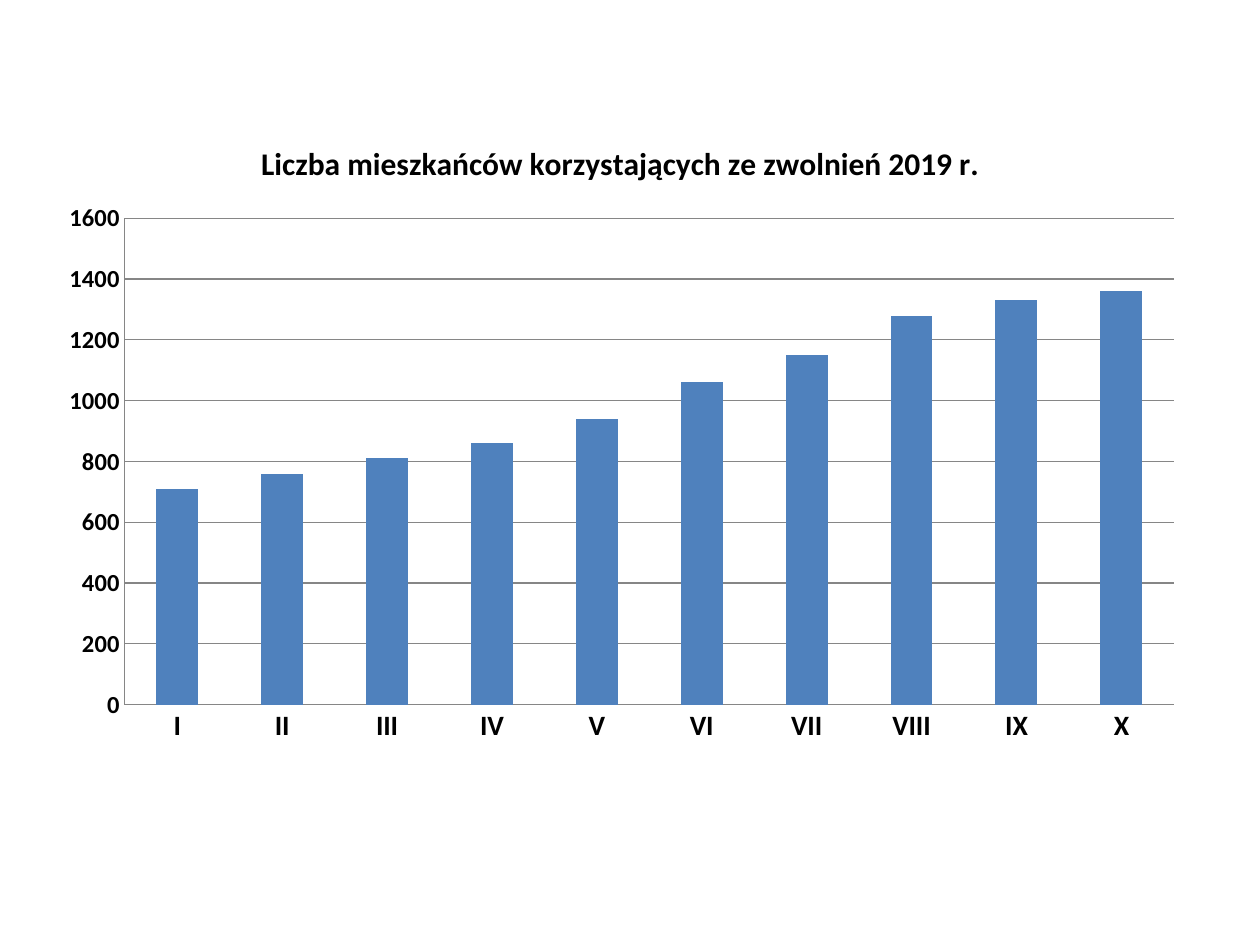
from dataclasses import dataclass

from lxml import etree
from pptx import Presentation
from pptx.chart.data import CategoryChartData
from pptx.dml.color import RGBColor
from pptx.enum.chart import XL_CHART_TYPE, XL_TICK_MARK
from pptx.oxml.ns import qn
from pptx.util import Inches, Pt

COLUMNS = XL_CHART_TYPE.COLUMN_CLUSTERED
NO_TICK = XL_TICK_MARK.NONE
BLANK_LAYOUT = 6

MONTHS = ["I", "II", "III", "IV", "V", "VI", "VII", "VIII", "IX", "X"]
RESIDENTS = [710, 760, 810, 860, 940, 1060, 1150, 1280, 1330, 1360]


@dataclass(frozen=True)
class Theme:
    font: str = "Calibri"
    text: RGBColor = RGBColor(0x00, 0x00, 0x00)
    bar: RGBColor = RGBColor(0x4F, 0x81, 0xBD)
    line: RGBColor = RGBColor(0x86, 0x86, 0x86)
    base_size: int = 10
    title_size: int = 18
    category_size: int = 16
    value_size: int = 14


class Deck:
    def __init__(self, prs, theme):
        self.theme = theme
        self.s = prs.slides.add_slide(prs.slide_layouts[BLANK_LAYOUT])

    def style_font(self, font, size, bold=True):
        font.name = self.theme.font
        font.size = Pt(size)
        font.bold = bold
        font.color.rgb = self.theme.text

    def style_line(self, line):
        line.color.rgb = self.theme.line
        line.width = Pt(0.75)

    def style_axis(self, axis, size):
        axis.major_tick_mark = axis.minor_tick_mark = NO_TICK
        self.style_font(axis.tick_labels.font, size)
        self.style_line(axis.format.line)

    def place_plot(self, chart, **box):
        """Fix the inner plot area, in fractions of the chart frame."""
        area = chart.plots[0]._element.getparent()
        for old in area.findall(qn("c:layout")):
            area.remove(old)
        layout = etree.Element(qn("c:layout"))
        area.insert(0, layout)
        manual = etree.SubElement(layout, qn("c:manualLayout"))
        settings = {"layoutTarget": "inner", "xMode": "edge", "yMode": "edge", **box}
        for name, value in settings.items():
            etree.SubElement(manual, qn(f"c:{name}"), val=str(value))

    def column_chart(self, title, categories, values, left, top, width, height):
        data = CategoryChartData()
        data.categories = categories
        data.add_series("Series 1", values)
        chart = self.s.shapes.add_chart(
            COLUMNS, Inches(left), Inches(top), Inches(width), Inches(height), data
        ).chart
        self.style_font(chart.font, self.theme.base_size, bold=False)
        chart.has_legend = False

        # Title
        chart.has_title = True
        chart.chart_title.include_in_layout = False
        p = chart.chart_title.text_frame.paragraphs[0]
        p.text = title
        self.style_font(p.font, self.theme.title_size)

        # Columns
        plot = chart.plots[0]
        plot.gap_width = 150
        plot.vary_by_categories = False
        fill = plot.series[0].format.fill
        fill.solid()
        fill.fore_color.rgb = self.theme.bar

        # Axes and gridlines
        self.style_axis(chart.category_axis, self.theme.category_size)
        axis = chart.value_axis
        self.style_axis(axis, self.theme.value_size)
        axis.minimum_scale, axis.maximum_scale, axis.major_unit = 0, 1600, 200
        axis.has_major_gridlines = True
        self.style_line(axis.major_gridlines.format.line)
        return chart


def main():
    prs = Presentation()
    prs.slide_width, prs.slide_height = Inches(10), Inches(7.5)
    deck = Deck(prs, Theme())
    chart = deck.column_chart(
        "Liczba mieszkańców korzystających ze zwolnień 2019 r.",
        MONTHS, RESIDENTS, left=0.35, top=0.92, width=9.15, height=5.08,
    )
    deck.place_plot(chart, x=0.07, y=0.16, w=0.91, h=0.76)
    prs.save("out.pptx")


if __name__ == "__main__":
    main()
